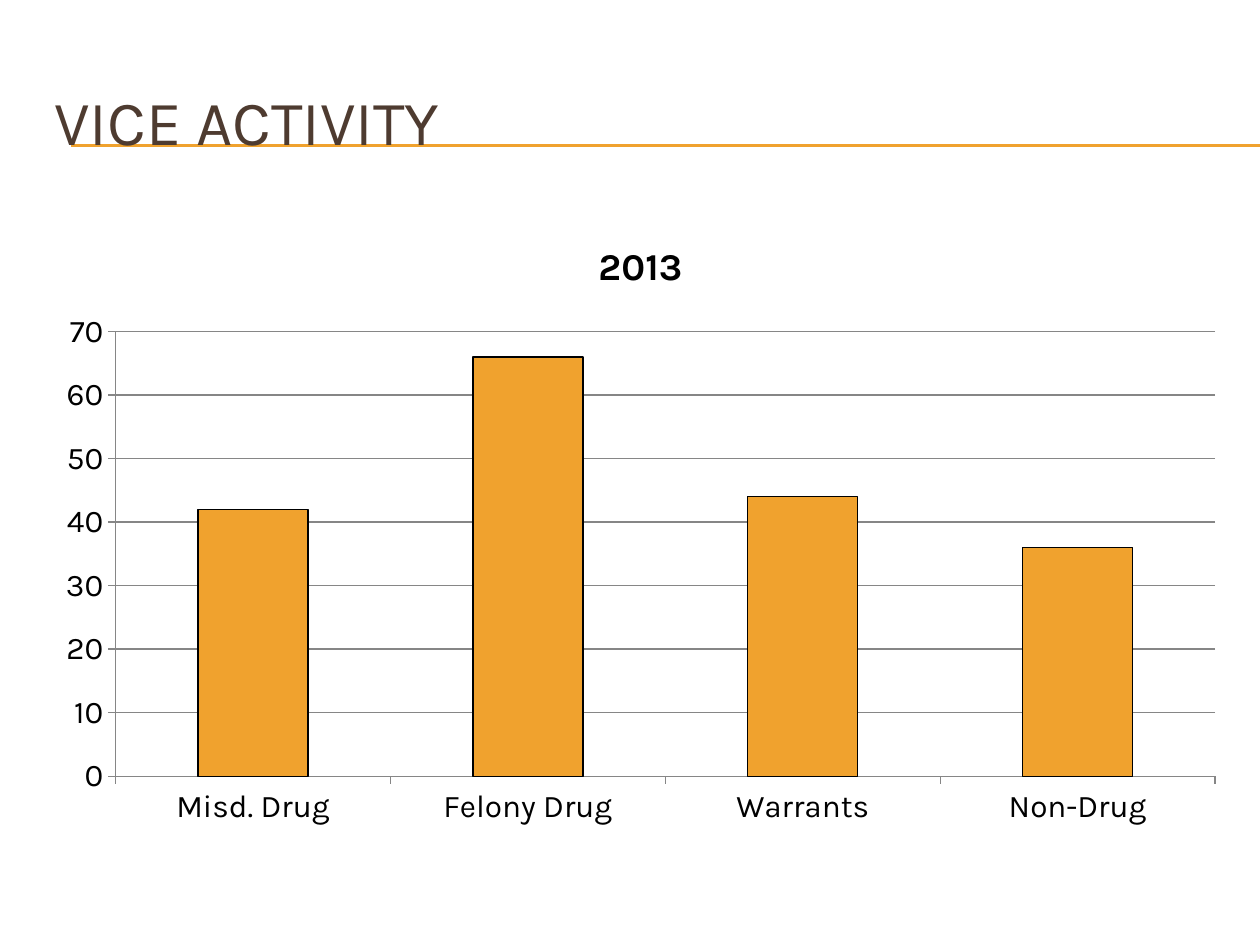
import pptx
import pptx.chart.data
import pptx.dml.color
import pptx.enum.chart
import pptx.enum.shapes
import pptx.enum.text
import pptx.util
from lxml import etree

Pt = pptx.util.Pt
ORANGE, BROWN, BLACK, GRAY = "F0A22E", "4E3B30", "000000", "868686"


def color(hex_code):
    return pptx.dml.color.RGBColor.from_string(hex_code)


class SlideBuilder:
    """Holds the deck's style and the slide being filled."""

    font_name = "Karla"

    def __init__(self, slide):
        self.slide = slide

    def style_font(self, font, size, hex_code, bold=False):
        font.name = self.font_name
        font.size = Pt(size)
        font.bold = bold
        font.color.rgb = color(hex_code)

    def style_line(self, line, hex_code, width=0.75):
        line.color.rgb = color(hex_code)
        line.width = Pt(width)

    def add_rule(self, left, right, y):
        rule = self.slide.shapes.add_connector(
            pptx.enum.shapes.MSO_CONNECTOR.STRAIGHT, Pt(left), Pt(y), Pt(right), Pt(y))
        self.style_line(rule.line, ORANGE)
        etree.SubElement(rule.element.spPr, pptx.oxml.ns.qn("a:effectLst"))

    def add_heading(self, text, left, top, width, height):
        heading = self.slide.shapes.add_textbox(Pt(left), Pt(top), Pt(width), Pt(height))
        frame = heading.text_frame
        frame.word_wrap = True
        frame.vertical_anchor = pptx.enum.text.MSO_ANCHOR.MIDDLE
        paragraph = frame.paragraphs[0]
        paragraph.text = text
        self.style_font(paragraph.font, 36, BROWN)

    def add_column_chart(self, title, counts, left, top, width, height):
        chart_data = pptx.chart.data.CategoryChartData()
        chart_data.categories = list(counts)
        chart_data.add_series(title, list(counts.values()))
        chart = self.slide.shapes.add_chart(
            pptx.enum.chart.XL_CHART_TYPE.COLUMN_CLUSTERED,
            Pt(left), Pt(top), Pt(width), Pt(height), chart_data).chart
        self.style_font(chart.font, 18, BLACK)
        chart.has_legend = False

        chart.has_title = True
        chart.chart_title.include_in_layout = False
        title_paragraph = chart.chart_title.text_frame.paragraphs[0]
        title_paragraph.text = title
        self.style_font(title_paragraph.font, 21.6, BLACK, bold=True)

        plot = chart.plots[0]
        plot.gap_width = 150
        plot.vary_by_categories = False
        columns = plot.series[0].format
        columns.fill.solid()
        columns.fill.fore_color.rgb = color(ORANGE)
        self.style_line(columns.line, BLACK)

        for axis in (chart.category_axis, chart.value_axis):
            axis.major_tick_mark = pptx.enum.chart.XL_TICK_MARK.OUTSIDE
            axis.minor_tick_mark = pptx.enum.chart.XL_TICK_MARK.NONE
            self.style_line(axis.format.line, GRAY)
        counts_axis = chart.value_axis
        counts_axis.minimum_scale, counts_axis.maximum_scale = 0, 70
        counts_axis.major_unit = 10
        counts_axis.has_major_gridlines = True
        self.style_line(counts_axis.major_gridlines.format.line, GRAY)


def main():
    deck = pptx.Presentation()
    deck.slide_width, deck.slide_height = Pt(720), Pt(540)
    builder = SlideBuilder(deck.slides.add_slide(deck.slide_layouts[6]))

    for rule_y in (82.8, 83.5):
        builder.add_rule(40.5, 720, rule_y)
    builder.add_heading("VICE ACTIVITY", 24, 36, 684, 66)
    arrests = {"Misd. Drug": 42, "Felony Drug": 66, "Warrants": 44, "Non-Drug": 36}
    builder.add_column_chart("2013", arrests, 24, 122.4, 684, 356.4)

    deck.save("out.pptx")


if __name__ == "__main__":
    main()
